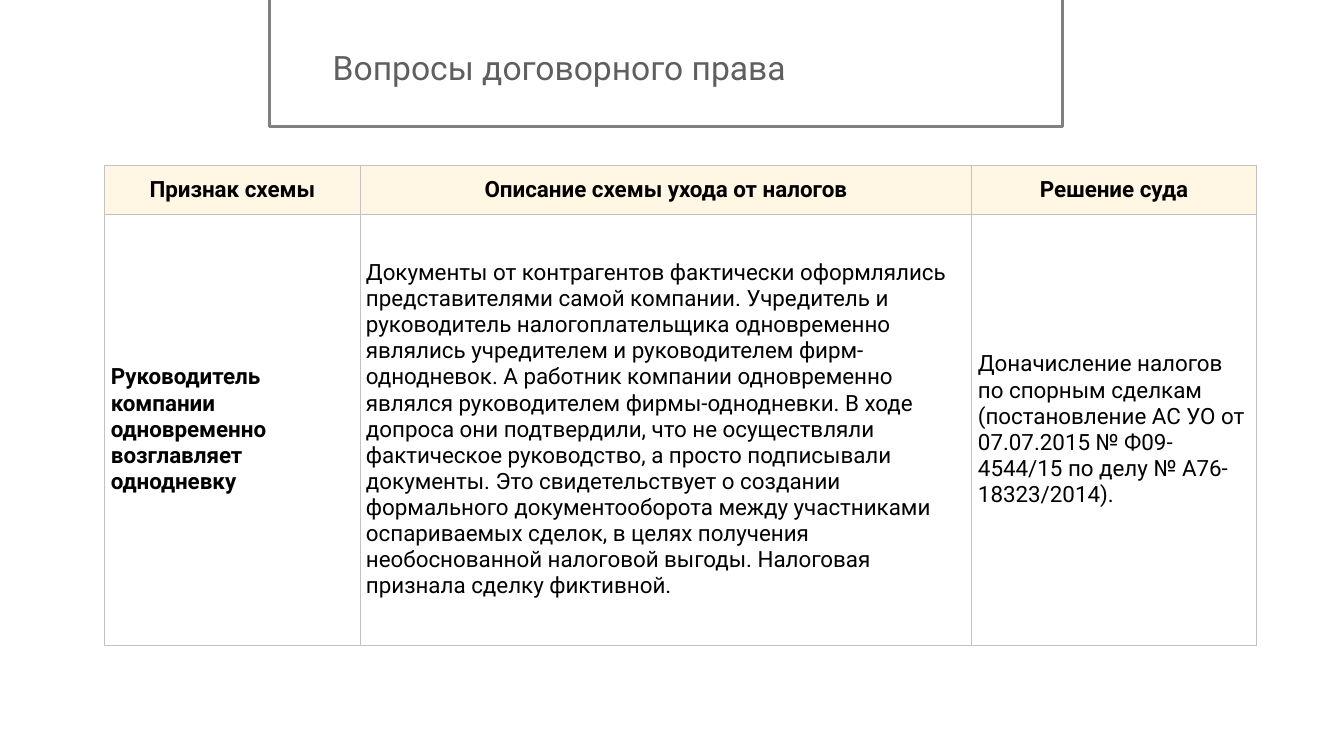
from dataclasses import dataclass

from lxml.etree import SubElement
from pptx import Presentation
from pptx.dml.color import RGBColor
from pptx.enum.shapes import MSO_SHAPE
from pptx.enum.text import MSO_ANCHOR, MSO_AUTO_SIZE, PP_ALIGN
from pptx.oxml.ns import qn
from pptx.slide import Slide
from pptx.table import _Cell
from pptx.text.text import _Paragraph
from pptx.util import Inches, Pt

FONT = "Roboto"
COLS = (2.53, 6.07, 2.82)


@dataclass
class Row:
    height: float
    fill: str
    align: PP_ALIGN
    top: float
    base: float
    bold: tuple[bool, ...]
    texts: tuple[str, ...]


ROWS = (
    Row(0.49, "FFF6E3", PP_ALIGN.CENTER, 0.08, 0.08, (True, True, True), (
        "Признак схемы",
        "Описание схемы ухода от налогов",
        "Решение суда",
    )),
    Row(4.27, "FFFFFF", PP_ALIGN.LEFT, 0.03, 0.04, (True, False, False), (
        "Руководитель компании одновременно возглавляет однодневку",
        "Документы от контрагентов фактически оформлялись представителями "
        "самой компании. Учредитель и руководитель налогоплательщика "
        "одновременно являлись учредителем и руководителем фирм-однодневок. "
        "А работник компании одновременно являлся руководителем "
        "фирмы-однодневки. В ходе допроса они подтвердили, что не "
        "осуществляли фактическое руководство, а просто подписывали "
        "документы. Это свидетельствует о создании формального "
        "документооборота между участниками оспариваемых сделок, в целях "
        "получения необоснованной налоговой выгоды. Налоговая признала "
        "сделку фиктивной.",
        "Доначисление налогов по спорным сделкам (постановление АС УО от "
        "07.07.2015 № Ф09-4544/15 по делу № А76-18323/2014).",
    )),
)


def color(code: str) -> RGBColor:
    return RGBColor.from_string(code)


def style(para: _Paragraph, size: float, code: str, bold: bool,
          align: PP_ALIGN) -> None:
    para.alignment = align
    for run in para.runs:
        run.font.name = FONT
        run.font.size = Pt(size)
        run.font.bold = bold
        run.font.color.rgb = color(code)


def border(cell: _Cell, code: str, width: float) -> None:
    props = cell._tc.get_or_add_tcPr()
    for side in ("a:lnL", "a:lnR", "a:lnT", "a:lnB"):
        line = SubElement(props, qn(side), w=str(Pt(width)))
        fill = SubElement(line, qn("a:solidFill"))
        SubElement(fill, qn("a:srgbClr"), val=code)


def add_title(slide: Slide, text: str) -> None:
    title = slide.shapes.title
    title.left, title.top = Inches(3.02), Inches(0.04)
    title.width, title.height = Inches(7.46), Inches(1.25)
    frame = title.text_frame
    frame.text = text
    frame.word_wrap = True
    frame.auto_size = MSO_AUTO_SIZE.NONE
    frame.vertical_anchor = MSO_ANCHOR.MIDDLE
    frame.margin_left = Inches(0.28)
    style(frame.paragraphs[0], 24, "5F5F5F", False, PP_ALIGN.LEFT)


def add_frame(slide: Slide) -> None:
    box = slide.shapes.add_shape(
        MSO_SHAPE.RECTANGLE, Inches(2.67), Inches(-0.1),
        Inches(7.87), Inches(1.36))
    box.shadow.inherit = False
    box.fill.background()
    box.line.color.rgb = color("808080")
    box.line.width = Pt(2.25)


def fill_cell(cell: _Cell, row: Row, text: str, bold: bool) -> None:
    cell.text_frame.text = text
    cell.vertical_anchor = MSO_ANCHOR.MIDDLE
    cell.margin_left = cell.margin_right = Inches(0.06)
    cell.margin_top = Inches(row.top)
    cell.margin_bottom = Inches(row.base)
    border(cell, "C2C2C2", 0.75)
    cell.fill.solid()
    cell.fill.fore_color.rgb = color(row.fill)
    style(cell.text_frame.paragraphs[0], 16, "000000", bold, row.align)


def add_grid(slide: Slide) -> None:
    high = sum(row.height for row in ROWS)
    table = slide.shapes.add_table(
        len(ROWS), len(COLS), Inches(1.04), Inches(1.64),
        Inches(sum(COLS)), Inches(high)).table
    table.horz_banding = False
    for col, width in zip(table.columns, COLS):
        col.width = Inches(width)
    for line, row in zip(table.rows, ROWS):
        line.height = Inches(row.height)
        for cell, text, bold in zip(line.cells, row.texts, row.bold):
            fill_cell(cell, row, text, bold)


def main() -> None:
    deck = Presentation()
    deck.slide_width, deck.slide_height = Inches(13.33), Inches(7.5)
    slide = deck.slides.add_slide(deck.slide_layouts[5])

    # Heading and its frame
    add_title(slide, "Вопросы договорного права")
    add_frame(slide)

    # Table of schemes
    add_grid(slide)

    deck.save("out.pptx")


if __name__ == "__main__":
    main()
